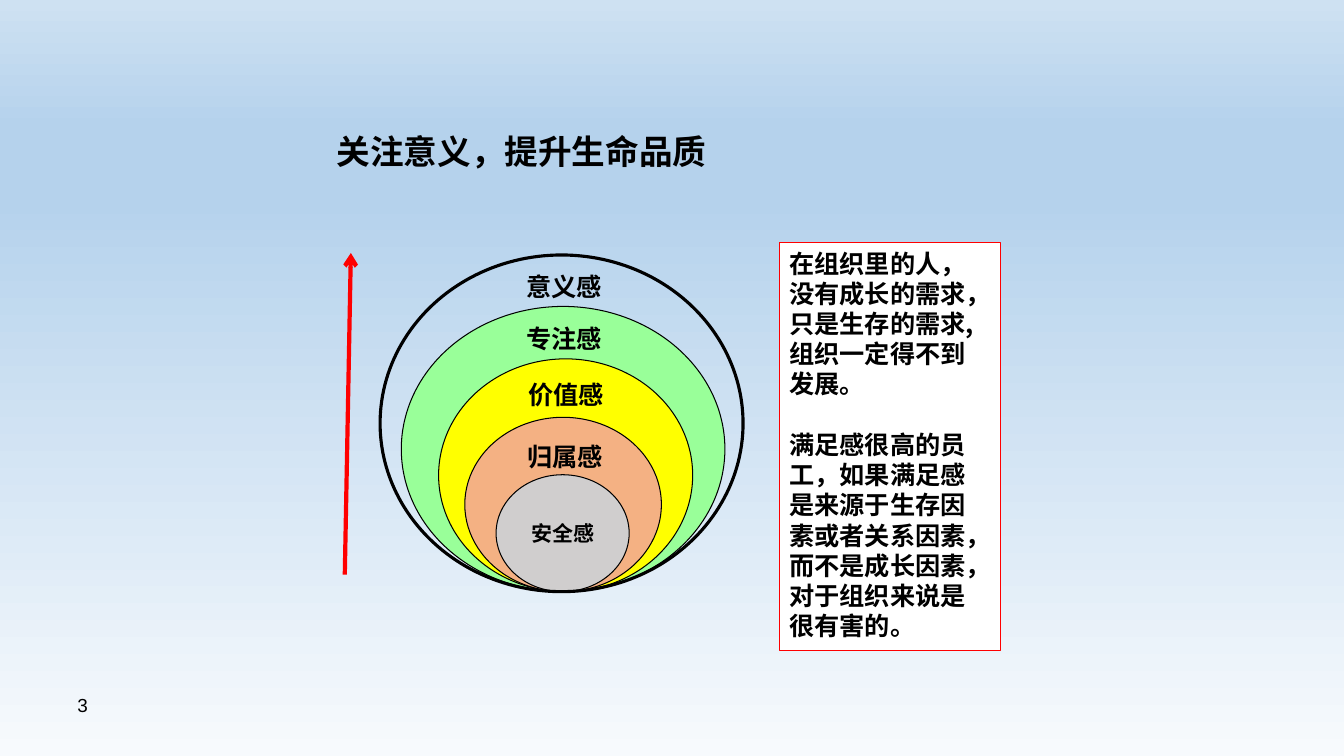
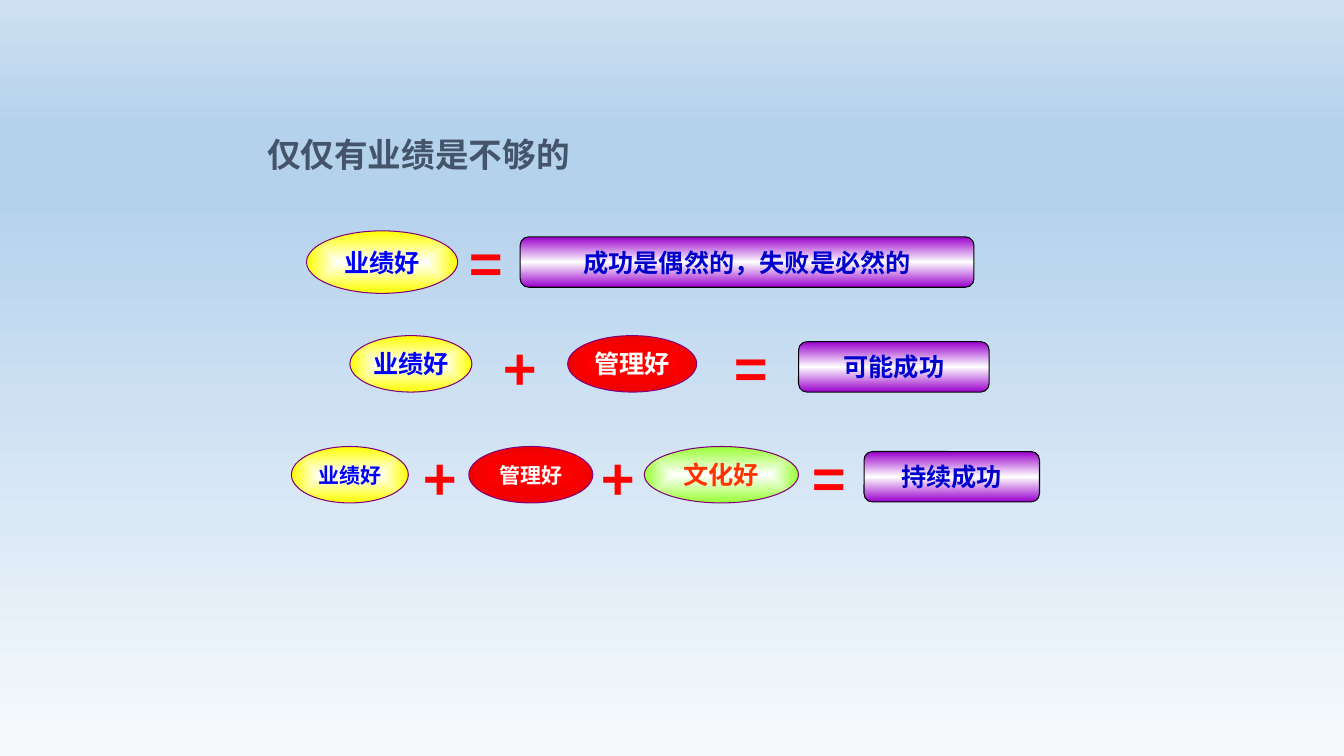
from dataclasses import dataclass

from lxml.etree import SubElement
from pptx import Presentation
from pptx.dml.color import RGBColor
from pptx.enum.shapes import MSO_CONNECTOR, MSO_SHAPE
from pptx.enum.text import MSO_ANCHOR, PP_ALIGN
from pptx.oxml.ns import qn
from pptx.util import Inches, Pt


@dataclass(frozen=True)
class Theme:
    latin: str = "Arial"
    chinese: str = "Noto Sans CJK SC"
    black: str = "000000"
    white: str = "FFFFFF"
    red: str = "FF0000"
    slate: str = "44546A"
    purple: str = "800080"
    navy: str = "0000CC"
    title_size: float = 24
    body_size: float = 18
    small_size: float = 15
    number_size: float = 13.5
    sign_size: float = 40.5
    thin: float = 0.75
    sky: tuple = ((0, "F7FAFD"), (74, "B5D2EC"), (83, "B5D2EC"), (100, "CEE1F2"))
    metal: tuple = ((0, "9900CC"), (50, "FFFFFF"), (100, "9900CC"))


THEME = Theme()

# Each term: text colour and gradient from the centre outwards
TERMS = {
    "业绩好": ("0000FF", ((0, "FFFFFF"), (100, "FFFF00"))),
    "管理好": ("FFFFFF", ((0, "FF0000"), (100, "EF0000"))),
    "文化好": ("FF3300", ((0, "FFFFFF"), (100, "99FF33"))),
}


def paint_gradient(fill, element, stops, angle=None):
    """Fill with a linear gradient, or one from the centre if no angle is given."""
    fill.solid()
    solid = next(element.iter(qn("a:solidFill")))
    gradient = solid.makeelement(qn("a:gradFill"), {"rotWithShape": "1"})
    stop_list = SubElement(gradient, qn("a:gsLst"))
    for position, color in stops:
        stop = SubElement(stop_list, qn("a:gs"), pos=str(position * 1000))
        SubElement(stop, qn("a:srgbClr"), val=color)
    if angle is None:
        centre = SubElement(gradient, qn("a:path"), path="shape")
        SubElement(centre, qn("a:fillToRect"), l="50000", t="50000", r="50000", b="50000")
    else:
        SubElement(gradient, qn("a:lin"), ang=str(angle * 60000), scaled="0")
    solid.getparent().replace(solid, gradient)


def write_text(box, *texts, size=THEME.body_size, color=THEME.black, font=THEME.chinese,
               bold=True, align=PP_ALIGN.CENTER, anchor=MSO_ANCHOR.MIDDLE,
               wrap=False, inset=(0, 0), line_height=None, gap=0):
    """Write one paragraph per text; inset is (horizontal, vertical), gap is between paragraphs."""
    frame = box.text_frame
    frame.word_wrap = wrap
    frame.vertical_anchor = anchor
    frame.margin_left = frame.margin_right = Inches(inset[0])
    frame.margin_top = frame.margin_bottom = Inches(inset[1])
    for index, text in enumerate(texts):
        para = frame.add_paragraph() if index else frame.paragraphs[0]
        para.alignment = align
        para.space_before = Pt(gap if index else 0)
        if line_height:
            para.line_spacing = Pt(line_height)
        span = para.add_run()
        span.text = text
        span.font.size = Pt(size)
        span.font.bold = bold
        span.font.name = font
        span.font.color.rgb = RGBColor.from_string(color)
        SubElement(span.font._element, qn("a:ea"), typeface=font)


def add_text(page, left, top, width, height, *texts, **style):
    box = page.shapes.add_textbox(*map(Inches, (left, top, width, height)))
    write_text(box, *texts, **style)


def add_shape(page, kind, left, top, width, height, fill=None, gradient=None,
              angle=None, line=THEME.black, line_width=THEME.thin):
    shape = page.shapes.add_shape(kind, *map(Inches, (left, top, width, height)))
    shape.shadow.inherit = False
    if gradient:
        paint_gradient(shape.fill, shape.element, gradient, angle)
    elif fill:
        shape.fill.solid()
        shape.fill.fore_color.rgb = RGBColor.from_string(fill)
    else:
        shape.fill.background()
    shape.line.color.rgb = RGBColor.from_string(line)
    shape.line.width = Pt(line_width)
    return shape


def add_arrow(page, start, end, color, width):
    arrow = page.shapes.add_connector(MSO_CONNECTOR.STRAIGHT, *map(Inches, start + end))
    arrow.line.color.rgb = RGBColor.from_string(color)
    arrow.line.width = Pt(width)
    SubElement(arrow.line._get_or_add_ln(), qn("a:tailEnd"), type="arrow")
    SubElement(arrow.element.spPr, qn("a:effectLst"))


def add_page(deck, title, left, middle, color):
    page = deck.slides.add_slide(deck.slide_layouts[6])
    add_text(page, left, middle - 0.25, 6, 0.5, title, size=THEME.title_size,
             color=color, align=PP_ALIGN.LEFT, wrap=True)
    return page


def build_meaning_page(deck):
    page = add_page(deck, "关注意义，提升生命品质", 3.34, 1.5, THEME.black)
    add_text(page, 0.67, 6.83, 3.11, 0.52, "3", size=THEME.number_size, font=THEME.latin,
             bold=False, align=PP_ALIGN.LEFT, anchor=MSO_ANCHOR.TOP, inset=(0.1, 0.05))

    bottom = 5.87
    for left, top, width, fill, line_width in (
        (3.98, 3.04, 3.21, "99FF99", THEME.thin),
        (4.35, 3.56, 2.52, "FFFF00", THEME.thin),
        (4.61, 4.14, 1.95, "F4B183", THEME.thin),
        (4.92, 4.71, 1.32, "D0CECE", THEME.thin),
        (3.77, 2.53, 3.6, None, 2.25),
    ):
        ring = add_shape(page, MSO_SHAPE.OVAL, left, top, width, bottom - top,
                         fill=fill, line_width=line_width)
        if top == 4.71:
            write_text(ring, "安全感", size=THEME.small_size, line_height=18)

    for text, left, top in (("归属感", 5.13, 4.38), ("价值感", 5.14, 3.76),
                            ("专注感", 5.12, 3.21), ("意义感", 5.12, 2.69)):
        add_text(page, left, top, 0.95, 0.35, text, line_height=18)

    add_arrow(page, (3.42, 5.7), (3.48, 2.51), THEME.red, 3)
    note = add_shape(page, MSO_SHAPE.RECTANGLE, 7.73, 2.41, 2.19, 4.04,
                     fill=THEME.white, line=THEME.red)
    write_text(note, "在组织里的人，没有成长的需求，只是生存的需求,组织一定得不到发展。",
               "满足感很高的员工，如果满足感是来源于生存因素或者关系因素，"
               "而不是成长因素，对于组织来说是很有害的。",
               align=PP_ALIGN.LEFT, anchor=MSO_ANCHOR.TOP, wrap=True,
               inset=(0.1, 0.05), line_height=21.6, gap=21.6)


def add_equation(page, term_middle, term_height, terms, signs, result_middle, result):
    for text, left, width, size in terms:
        color, gradient = TERMS[text]
        oval = add_shape(page, MSO_SHAPE.OVAL, left, term_middle - term_height / 2,
                         width, term_height, gradient=gradient, line=THEME.purple)
        write_text(oval, text, size=size, color=color)
    for sign, left in signs:
        add_text(page, left, result_middle - 0.37, 0.56, 0.78, sign,
                 size=THEME.sign_size, color=THEME.red)
    text, left, width = result
    bar = add_shape(page, MSO_SHAPE.ROUNDED_RECTANGLE, left, result_middle - 0.25,
                    width, 0.5, gradient=THEME.metal, angle=90)
    write_text(bar, text, color=THEME.navy)


def build_success_page(deck):
    page = add_page(deck, "仅仅有业绩是不够的", 2.65, 1.53, THEME.slate)
    body, small = THEME.body_size, THEME.small_size
    add_equation(page, 2.6, 0.62, [("业绩好", 3.04, 1.5, body)], [("=", 4.54)],
                 2.6, ("成功是偶然的，失败是必然的", 5.16, 4.5))
    add_equation(page, 3.61, 0.56,
                 [("业绩好", 3.47, 1.21, body), ("管理好", 5.63, 1.28, body)],
                 [("+", 4.88), ("=", 7.17)], 3.64, ("可能成功", 7.92, 1.89))
    add_equation(page, 4.71, 0.56,
                 [("业绩好", 2.89, 1.16, small), ("管理好", 4.65, 1.23, small),
                  ("文化好", 6.39, 1.53, body)],
                 [("+", 4.09), ("+", 5.85), ("=", 7.94)], 4.73, ("持续成功", 8.57, 1.74))


def main():
    deck = Presentation()
    deck.slide_width, deck.slide_height = Inches(13.33), Inches(7.5)
    master = deck.slide_master
    paint_gradient(master.background.fill, master.element, THEME.sky, angle=270)
    build_meaning_page(deck)
    build_success_page(deck)
    deck.save("out.pptx")


if __name__ == "__main__":
    main()
